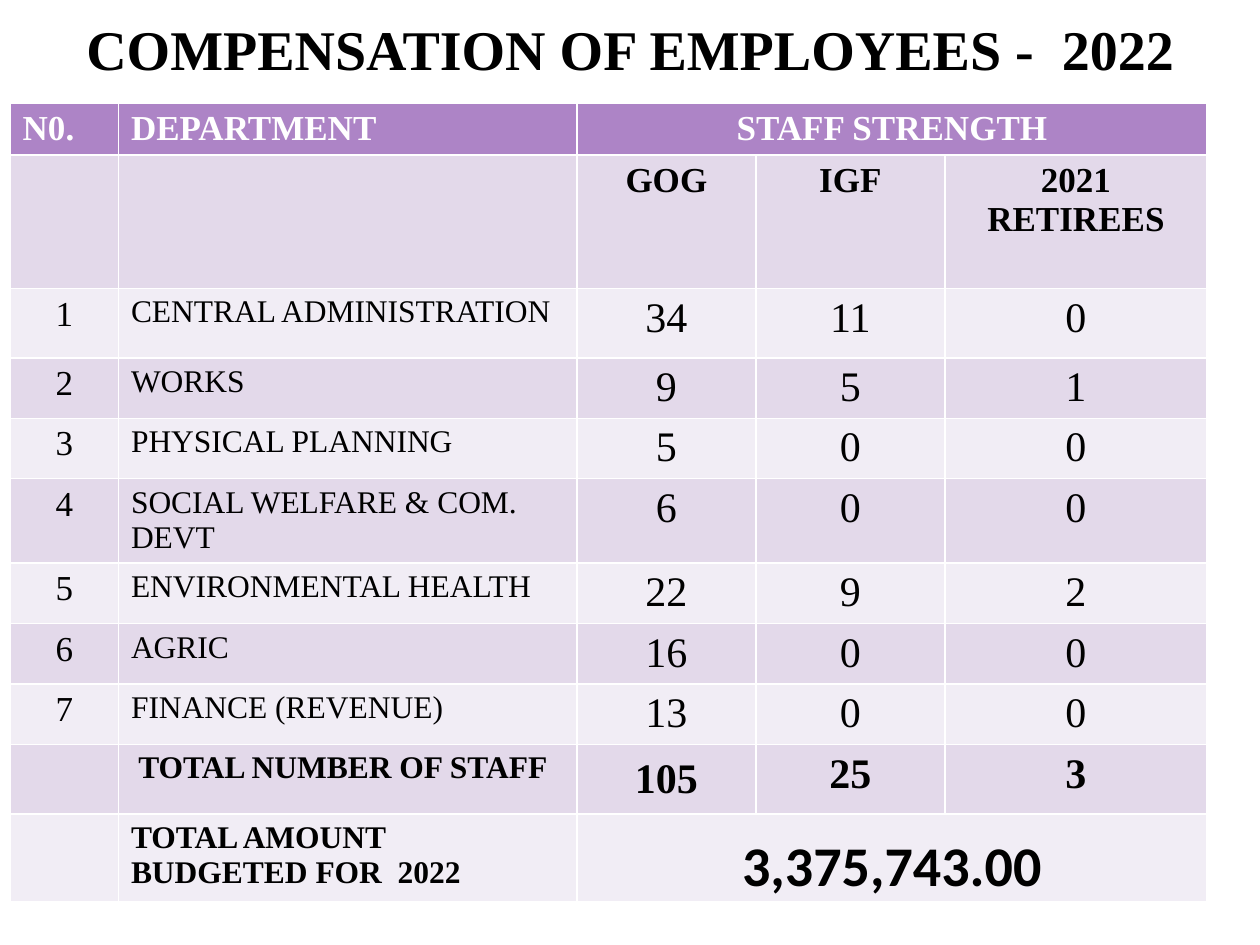
"""Build the 2022 compensation of employees slide with its staff strength table."""
import pptx
import pptx.util
import pptx.dml.color
import pptx.enum.text
from pptx.util import Inches, Pt

BLACK = pptx.dml.color.RGBColor(0x00, 0x00, 0x00)
WHITE = pptx.dml.color.RGBColor(0xFF, 0xFF, 0xFF)
PURPLE = pptx.dml.color.RGBColor(0xAD, 0x84, 0xC6)
LILAC = pptx.dml.color.RGBColor(0xE3, 0xD9, 0xEA)
PALE = pptx.dml.color.RGBColor(0xF1, 0xED, 0xF5)
ALIGN = pptx.enum.text.PP_ALIGN
ANCHOR = pptx.enum.text.MSO_ANCHOR

COLUMN_WIDTHS = [0.86, 3.64, 1.42, 1.5, 2.08]
ROW_HEIGHTS = [0.41, 1.06, 0.55, 0.48, 0.48, 0.67, 0.48, 0.48, 0.48, 0.55, 0.7]
ROWS = [
    ["N0.", "DEPARTMENT", "STAFF STRENGTH", "", ""],
    ["", "", "GOG", "IGF", "2021\nRETIREES"],
    ["1", "CENTRAL ADMINISTRATION", "34", "11", "0"],
    ["2", "WORKS", "9", "5", "1"],
    ["3", "PHYSICAL PLANNING", "5", "0", "0"],
    ["4", "SOCIAL WELFARE & COM. DEVT", "6", "0", "0"],
    ["5", "ENVIRONMENTAL HEALTH", "22", "9", "2"],
    ["6", "AGRIC", "16", "0", "0"],
    ["7", "FINANCE (REVENUE)", "13", "0", "0"],
    ["", " TOTAL NUMBER OF STAFF", "105", "25", "3"],
    ["", "TOTAL AMOUNT BUDGETED FOR  2022", "3,375,743.00", "", ""],
]
BODY_SIZES = [20, 18, 24, 24, 24]
STAFF_TOTAL_ROW = 9
BUDGET_ROW = 10


def format_text(text_frame, size, color, bold, alignment, font_name="Times New Roman"):
    for paragraph in text_frame.paragraphs:
        paragraph.alignment = alignment
        for run in paragraph.runs:
            run.font.name = font_name
            run.font.size = Pt(size)
            run.font.bold = bold
            run.font.color.rgb = color


def tighten(cell, anchor):
    cell.vertical_anchor = anchor
    cell.margin_left = cell.margin_right = cell.margin_top = Inches(0.01)
    cell.margin_bottom = Inches(0)


presentation = pptx.Presentation()
presentation.slide_width = Inches(10)
presentation.slide_height = Inches(7.5)
slide = presentation.slides.add_slide(presentation.slide_layouts[5])

title = slide.shapes.title
title.left, title.top = Inches(0.42), Inches(0.01)
title.width, title.height = Inches(9.17), Inches(0.74)
title.text_frame.text = "COMPENSATION OF EMPLOYEES -  2022"
title.text_frame.vertical_anchor = ANCHOR.MIDDLE
format_text(title.text_frame, 32, BLACK, True, ALIGN.CENTER)

table = slide.shapes.add_table(
    len(ROWS), len(COLUMN_WIDTHS), Inches(0.08), Inches(0.82),
    Inches(sum(COLUMN_WIDTHS)), Inches(sum(ROW_HEIGHTS))).table
for column, width in zip(table.columns, COLUMN_WIDTHS):
    column.width = Inches(width)
for row, height in zip(table.rows, ROW_HEIGHTS):
    row.height = Inches(height)
for row_index in (0, BUDGET_ROW):
    table.cell(row_index, 2).merge(table.cell(row_index, 4))

for row_index, texts in enumerate(ROWS):
    is_header = row_index == 0
    is_bold = row_index < 2 or row_index >= STAFF_TOTAL_ROW
    band = PURPLE if is_header else LILAC if row_index % 2 else PALE
    for column_index, text in enumerate(texts):
        cell = table.cell(row_index, column_index)
        cell.fill.solid()
        cell.fill.fore_color.rgb = band
        if not text:
            continue
        cell.text_frame.text = text
        size = 20 if row_index < 2 else BODY_SIZES[column_index]
        is_left = column_index == 1 or (is_header and column_index == 0)
        format_text(cell.text_frame, size, WHITE if is_header else BLACK, is_bold,
                    ALIGN.LEFT if is_left else ALIGN.CENTER)

tighten(table.cell(STAFF_TOTAL_ROW, 2), ANCHOR.MIDDLE)
budget_cell = table.cell(BUDGET_ROW, 2)
tighten(budget_cell, ANCHOR.BOTTOM)
format_text(budget_cell.text_frame, 32, BLACK, True, ALIGN.CENTER, "Calibri")

presentation.save("out.pptx")
